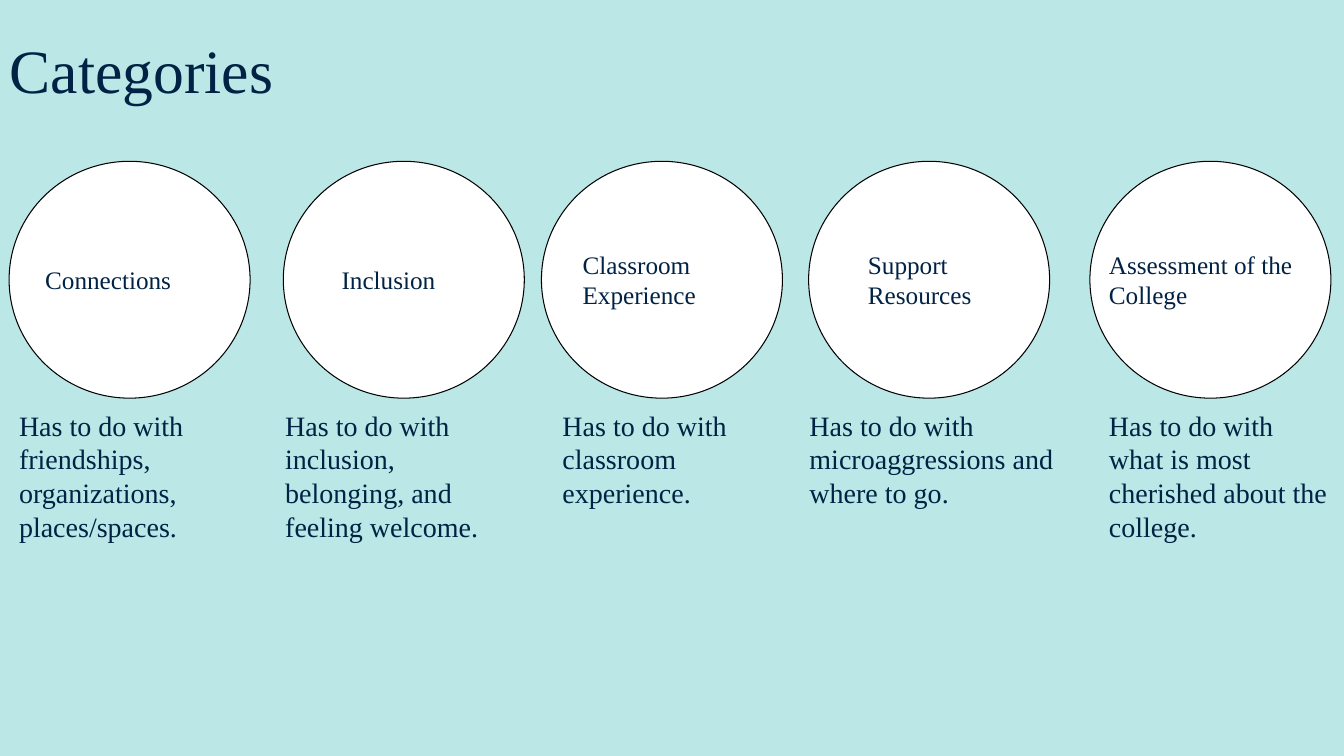
from pptx import Presentation
from pptx.dml.color import RGBColor
from pptx.enum.shapes import MSO_SHAPE as Shape
from pptx.enum.text import MSO_ANCHOR as Anchor
from pptx.util import Inches, Pt

TITLE = "Categories"
# label, (left, width, lines), circle left, description, (left, width, lines)
CATEGORIES = [
    ("Connections", (0.35, 1.86, 1), 0.09,
     "Has to do with friendships, organizations, places/spaces.", (0.09, 2.39, 4)),
    ("Inclusion", (3.29, 1.47, 1), 2.81,
     "Has to do with inclusion, belonging, and feeling welcome.", (2.73, 2.39, 5)),
    ("Classroom Experience", (5.68, 1.86, 2), 5.37,
     "Has to do with classroom experience.", (5.48, 2.39, 3)),
    ("Support Resources", (8.51, 1.55, 2), 8.02,
     "Has to do with microaggressions and where to go.", (7.93, 2.82, 3)),
    ("Assessment of the College", (10.9, 2.19, 2), 10.81,
     "Has to do with what is most cherished about the college.", (10.9, 2.39, 5)),
]

FONT, NAVY, AQUA, WHITE, BLACK = "Times New Roman", "002244", "BBE7E6", "FFFFFF", "000000"
CIRCLE_TOP, CIRCLE_WIDTH, CIRCLE_HEIGHT = 1.6, 2.39, 2.35
INSET = 0.1
LABEL_SIZE, DESCRIPTION_SIZE, TITLE_SIZE = 18, 20, 44


def color(hex_value):
    return RGBColor.from_string(hex_value)


def box_height(lines, size):
    return 2 * INSET + lines * size * 1.22 / 72


def add_text(slide, text, left, top, width, height, size, inset_y=INSET):
    box = slide.shapes.add_textbox(*map(Inches, (left, top, width, height)))
    frame = box.text_frame
    frame.word_wrap = True
    frame.margin_left = frame.margin_right = Inches(INSET)
    frame.margin_top = frame.margin_bottom = Inches(inset_y)
    frame.text = text
    font = frame.paragraphs[0].runs[0].font
    font.name, font.size = FONT, Pt(size)
    font.color.rgb = color(NAVY)
    return frame


def add_circle(slide, left):
    circle = slide.shapes.add_shape(
        Shape.OVAL, *map(Inches, (left, CIRCLE_TOP, CIRCLE_WIDTH, CIRCLE_HEIGHT)))
    circle.shadow.inherit = False
    circle.fill.solid()
    circle.fill.fore_color.rgb = color(WHITE)
    circle.line.color.rgb = color(BLACK)
    circle.line.width = Pt(0.75)


def main():
    deck = Presentation()
    deck.slide_width, deck.slide_height = Inches(13.33), Inches(7.5)
    slide = deck.slides.add_slide(deck.slide_layouts[6])
    slide.background.fill.solid()
    slide.background.fill.fore_color.rgb = color(AQUA)

    # Title
    title = add_text(slide, TITLE, 0, 0, 5.24, 1.45, TITLE_SIZE, inset_y=0.05)
    title.vertical_anchor = Anchor.MIDDLE
    title.paragraphs[0].line_spacing = 0.9

    # Circles with a centred label and a description below
    middle = CIRCLE_TOP + CIRCLE_HEIGHT / 2
    for label, label_place, circle_left, description, description_place in CATEGORIES:
        add_circle(slide, circle_left)
        left, width, lines = label_place
        height = box_height(lines, LABEL_SIZE)
        add_text(slide, label, left, middle - height / 2, width, height, LABEL_SIZE)
        left, width, lines = description_place
        add_text(slide, description, left, CIRCLE_TOP + CIRCLE_HEIGHT, width,
                 box_height(lines, DESCRIPTION_SIZE), DESCRIPTION_SIZE)

    deck.save("out.pptx")


if __name__ == "__main__":
    main()
